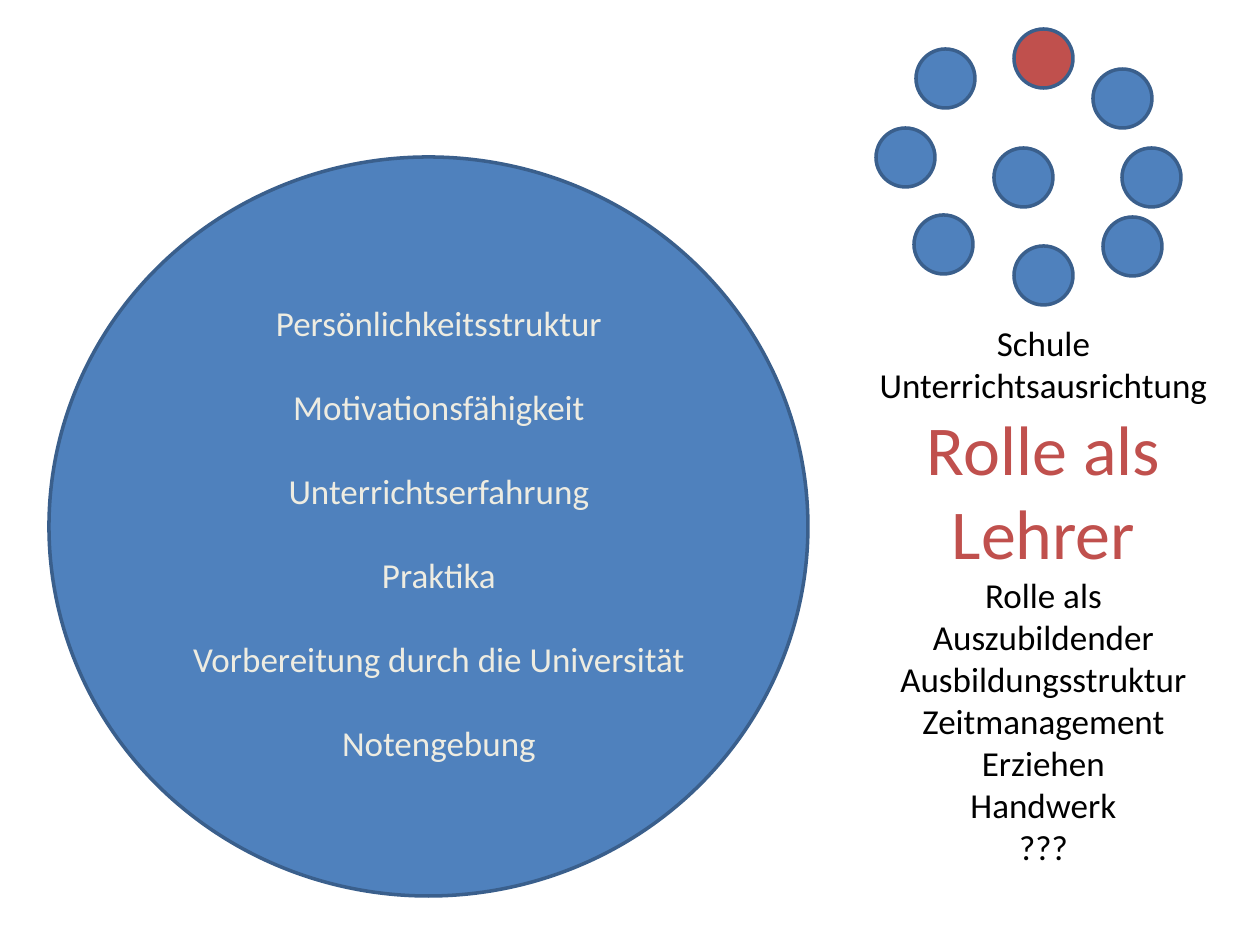
import pptx
import pptx.util
import pptx.dml.color
import pptx.enum.shapes
import pptx.enum.text

PX = 914400 // 126
BLUE, DARK_BLUE, RED = "4F81BD", "3A5F8C", "C0504D"
CREAM, BLACK = "EEECE1", "000000"
DOT_SIZE = 59

INFLUENCES = [
    "Persönlichkeitsstruktur",
    "Motivationsfähigkeit",
    "Unterrichtserfahrung",
    "Praktika",
    "Vorbereitung durch die Universität",
    "Notengebung",
]
TOPICS_BEFORE = ["Schule", "Unterrichtsausrichtung"]
CURRENT_TOPIC = "Rolle als Lehrer"
TOPICS_AFTER = [
    "Rolle als Auszubildender",
    "Ausbildungsstruktur",
    "Zeitmanagement",
    "Erziehen",
    "Handwerk",
    "???",
]
CURRENT_DOT = (1014, 29)
OTHER_DOTS = [
    (916, 49), (876, 128), (914, 215), (1014, 246),
    (1103, 217), (1122, 148), (1093, 69), (994, 148),
]


def px(*lengths):
    return [pptx.util.Emu(length * PX) for length in lengths]


def color(value):
    return pptx.dml.color.RGBColor.from_string(value)


def add_circle(page, left, top, width, height, fill=BLUE):
    circle = page.shapes.add_shape(
        pptx.enum.shapes.MSO_SHAPE.OVAL, *px(left, top, width, height))
    circle.shadow.inherit = False
    circle.fill.solid()
    circle.fill.fore_color.rgb = color(fill)
    circle.line.color.rgb = color(DARK_BLUE)
    circle.line.width = pptx.util.Pt(2)


def add_text_box(page, left, top, width, height):
    box = page.shapes.add_textbox(*px(left, top, width, height))
    box.text_frame.word_wrap = True
    return box


def write(box, text, size=20, fill=BLACK, before=0):
    """Add a centred paragraph, using the empty first one if it is free."""
    frame = box.text_frame
    para = frame.paragraphs[0] if not frame.text else frame.add_paragraph()
    para.alignment = pptx.enum.text.PP_ALIGN.CENTER
    para.space_before = pptx.util.Pt(before)
    span = para.add_run()
    span.text = text
    span.font.name = "Calibri"
    span.font.size = pptx.util.Pt(size)
    span.font.color.rgb = color(fill)


def add_influences(page):
    add_circle(page, 49, 157, 759, 739)
    box = add_text_box(page, 129, 295, 620, 479)
    for index, text in enumerate(INFLUENCES):
        write(box, text, fill=CREAM, before=24 if index else 0)


def add_topics(page):
    box = add_text_box(page, 866, 315, 355, 602)
    for text in TOPICS_BEFORE:
        write(box, text)
    write(box, CURRENT_TOPIC, size=40, fill=RED)
    for text in TOPICS_AFTER:
        write(box, text)


def add_dots(page):
    add_circle(page, *CURRENT_DOT, DOT_SIZE, DOT_SIZE, fill=RED)
    for left, top in OTHER_DOTS:
        add_circle(page, left, top, DOT_SIZE, DOT_SIZE)


def main():
    deck = pptx.Presentation()
    deck.slide_width, deck.slide_height = px(1260, 945)
    page = deck.slides.add_slide(deck.slide_layouts[6])
    add_influences(page)
    add_topics(page)
    add_dots(page)
    deck.save("out.pptx")


if __name__ == "__main__":
    main()
